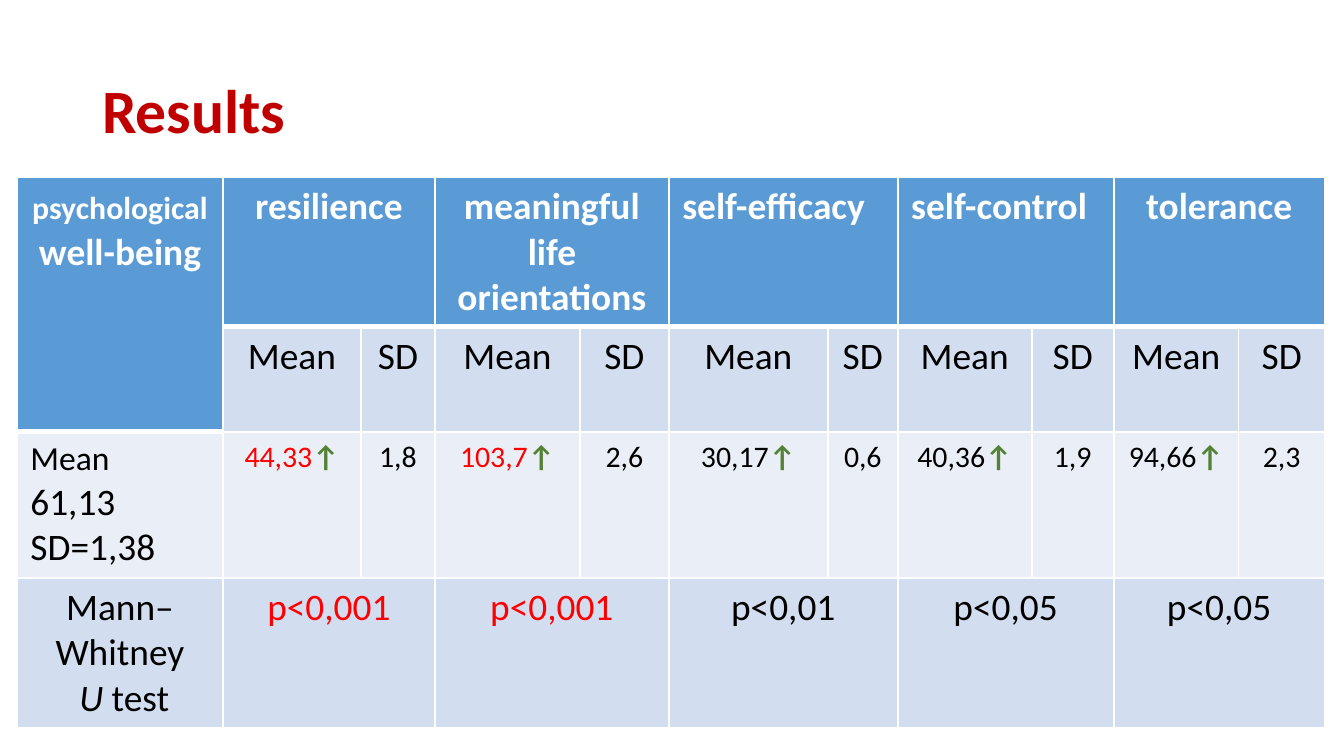
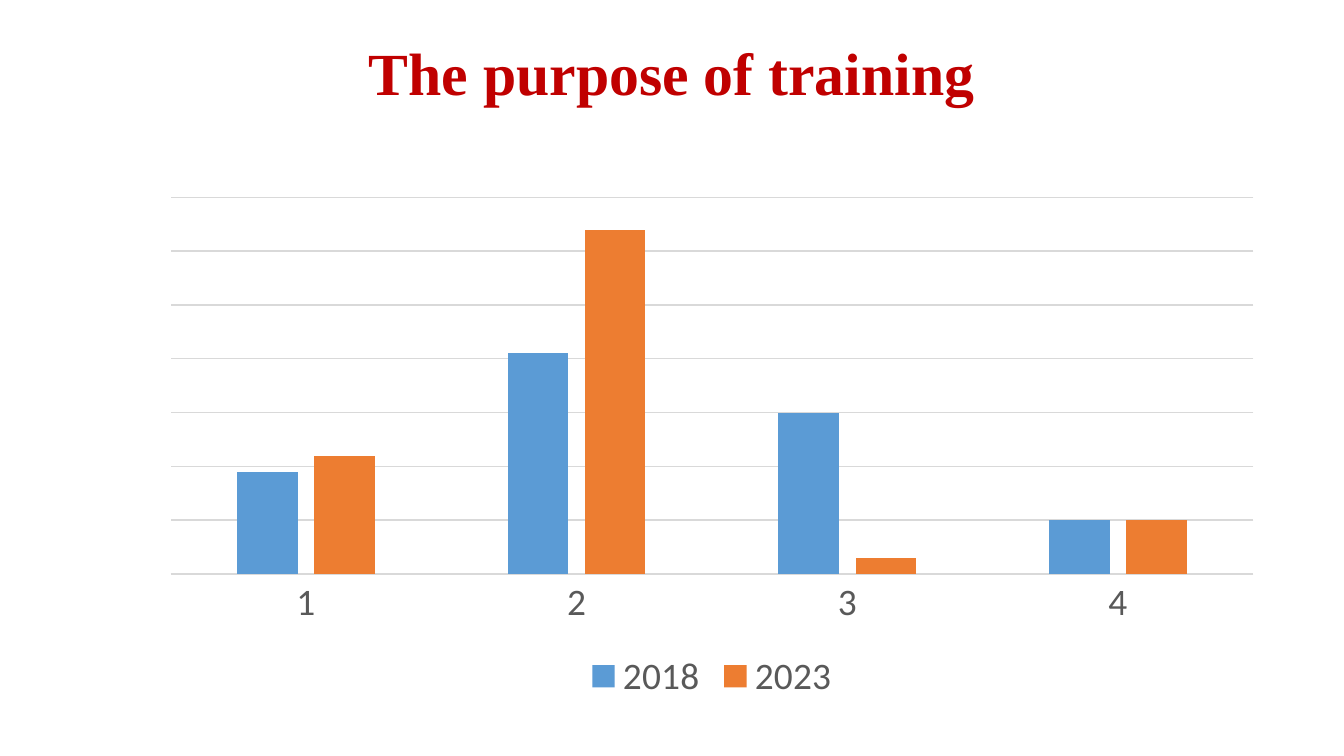
from lxml.etree import SubElement as Sub
from pptx import Presentation
from pptx.chart.data import CategoryChartData as ChartData
from pptx.dml.color import RGBColor as Rgb
from pptx.enum.chart import XL_CHART_TYPE as Kind, XL_LEGEND_POSITION as Side
from pptx.enum.chart import XL_TICK_LABEL_POSITION as Label, XL_TICK_MARK as Tick
from pptx.enum.text import MSO_ANCHOR as Anchor, PP_ALIGN as Align
from pptx.oxml.ns import qn
from pptx.util import Emu, Pt

PX = 914400 / 134.4
HEX = {
    "title": "C00000", "white": "FFFFFF", "black": "000000", "red": "FF0000",
    "green": "548235", "blue": "5B9BD5", "orange": "ED7D31",
    "band": "D2DEEF", "pale": "EAEFF7", "grey": "595959", "grid": "D9D9D9",
}
SANS, SERIF = "Calibri", "Times New Roman"
TITLE = (93, 40, 1158, 147)

COLS = (206, 138, 74, 145, 89, 159, 70, 134, 82, 125, 86)
ROWS = (150, 105, 146, 150)
HEAD = {"size": 20, "bold": True, "color": "white"}
BODY = {"size": 20}
SMALL = {"size": 16}
ARROW = {"size": 16, "bold": True, "color": "green"}
# trait, head alignment, mean, colour of mean, SD, p, colour of p
TRAITS = (
    ("resilience", Align.CENTER, "44,33", "red", "1,8", "p<0,001", "red"),
    ("meaningful life orientations", Align.CENTER, "103,7", "red", "2,6", "p<0,001", "red"),
    ("self-efficacy", Align.LEFT, "30,17", "black", "0,6", "p<0,01", "black"),
    ("self-control", Align.LEFT, "40,36", "black", "1,9", "p<0,05", "black"),
    ("tolerance", Align.CENTER, "94,66", "black", "2,3", "p<0,05", "black"),
)
YEARS = (
    ("2018", (19, 41, 30, 10), "blue"),
    ("2023", (22, 64, 3, 10), "orange"),
)


def px(num):
    return Emu(round(num * PX))


def tint(name):
    return Rgb.from_string(HEX[name])


def style(font, size, color="black", name=SANS, **form):
    form = {"name": name, "size": Pt(size), "bold": False, **form}
    for key, val in form.items():
        setattr(font, key, val)
    font.color.rgb = tint(color)


def write(para, runs, align):
    """Fill a paragraph with (text, format) runs."""
    para.alignment = align
    for text, form in runs:
        run = para.add_run()
        run.text = text
        style(run.font, **form)


def title(slide, text, size, name, align, foot=5):
    """Add the red heading; foot is the lower inset in px."""
    frame = slide.shapes.add_textbox(*map(px, TITLE)).text_frame
    form = {
        "word_wrap": True, "vertical_anchor": Anchor.MIDDLE,
        "margin_left": px(9), "margin_right": px(9),
        "margin_top": px(5), "margin_bottom": px(foot),
    }
    for key, val in form.items():
        setattr(frame, key, val)
    para = frame.paragraphs[0]
    para.line_spacing = 0.9
    look = {"size": size, "color": "title", "name": name, "bold": True}
    write(para, [(text, look)], align)


def edge(cell, base):
    """Draw white cell borders, with the bottom one base points wide."""
    props = cell._tc.get_or_add_tcPr()
    for spot, (tag, width) in enumerate((("L", 1), ("R", 1), ("T", 1), ("B", base))):
        line = props.makeelement(qn(f"a:ln{tag}"), {"w": str(Pt(width))})
        fill = Sub(line, qn("a:solidFill"))
        Sub(fill, qn("a:srgbClr"), val=HEX["white"])
        props.insert(spot, line)


def put(cell, *lines, align=Align.CENTER):
    """Write each line, a list of runs, as one paragraph of the cell."""
    frame = cell.text_frame
    for num, runs in enumerate(lines):
        para = frame.add_paragraph() if num else frame.paragraphs[0]
        write(para, runs, align)


def grid(slide):
    """Add the empty table with its sizes, fills and borders."""
    shape = slide.shapes.add_table(
        len(ROWS), len(COLS), px(17), px(177), px(sum(COLS)), px(sum(ROWS)))
    table = shape.table
    for col, width in zip(table.columns, COLS):
        col.width = px(width)
    for row, height in zip(table.rows, ROWS):
        row.height = px(height)
    fills = ("blue", "band", "pale", "band")
    for r, fill in enumerate(fills):
        for c in range(len(COLS)):
            cell = table.cell(r, c)
            head = r == 0 or (r == 1 and c == 0)
            cell.fill.solid()
            cell.fill.fore_color.rgb = tint("blue" if head else fill)
            edge(cell, 3 if head else 1)
    return table


def scores(slide):
    table = grid(slide)
    at = table.cell
    at(0, 0).merge(at(1, 0))
    put(at(0, 0), [("psychological", {**HEAD, "size": 17}), (" well-being", HEAD)])
    put(at(2, 0), [("Mean", {"size": 18})], [("61,13 SD=1,38", BODY)], align=Align.LEFT)
    put(at(3, 0), [("Mann–Whitney", BODY)],
        [(" ", BODY), ("U", {**BODY, "italic": True}), (" test", BODY)])
    for num, (trait, align, mean, hue, dev, prob, mark) in enumerate(TRAITS):
        c = 1 + 2 * num
        for r in (0, 3):
            at(r, c).merge(at(r, c + 1))
        put(at(0, c), [(trait, HEAD)], align=align)
        put(at(1, c), [("Mean", BODY)])
        put(at(1, c + 1), [("SD", BODY)])
        put(at(2, c), [(mean, {**SMALL, "color": hue}), ("↑", ARROW)])
        put(at(2, c + 1), [(dev, SMALL)])
        put(at(3, c), [(prob, {**BODY, "color": mark})])


def rule(line):
    line.color.rgb = tint("grid")
    line.width = Pt(0.75)


def bars(slide):
    data = ChartData()
    data.categories = ["1", "2", "3", "4"]
    for year, vals, _ in YEARS:
        data.add_series(year, vals)
    chart = slide.shapes.add_chart(
        Kind.COLUMN_CLUSTERED, px(148), px(187), px(1128), px(520), data).chart
    style(chart.font, 10)
    chart.has_title = False
    chart.has_legend = True
    chart.legend.position = Side.BOTTOM
    chart.legend.include_in_layout = False
    style(chart.legend.font, 20, "grey")

    plot = chart.plots[0]
    for key, val in {"gap_width": 219, "overlap": -27, "vary_by_categories": False}.items():
        setattr(plot, key, val)
    for bar, (_, _, color) in zip(plot.series, YEARS):
        bar.format.fill.solid()
        bar.format.fill.fore_color.rgb = tint(color)

    base = chart.category_axis
    base.major_tick_mark = base.minor_tick_mark = Tick.NONE
    base.tick_label_position = Label.NEXT_TO_AXIS
    style(base.tick_labels.font, 20, "grey")
    rule(base.format.line)
    axis = chart.value_axis
    form = {
        "minimum_scale": 0, "maximum_scale": 70, "major_unit": 10,
        "has_major_gridlines": True, "visible": False,
    }
    for key, val in form.items():
        setattr(axis, key, val)
    rule(axis.major_gridlines.format.line)


def main():
    deck = Presentation()
    deck.slide_width, deck.slide_height = px(1344), px(756)
    blank = deck.slide_layouts[6]

    slide = deck.slides.add_slide(blank)
    title(slide, "Results", 33, SANS, Align.LEFT)
    scores(slide)

    slide = deck.slides.add_slide(blank)
    title(slide, "The purpose of training", 32, SERIF, Align.CENTER, foot=79)
    bars(slide)

    deck.save("out.pptx")


if __name__ == "__main__":
    main()
